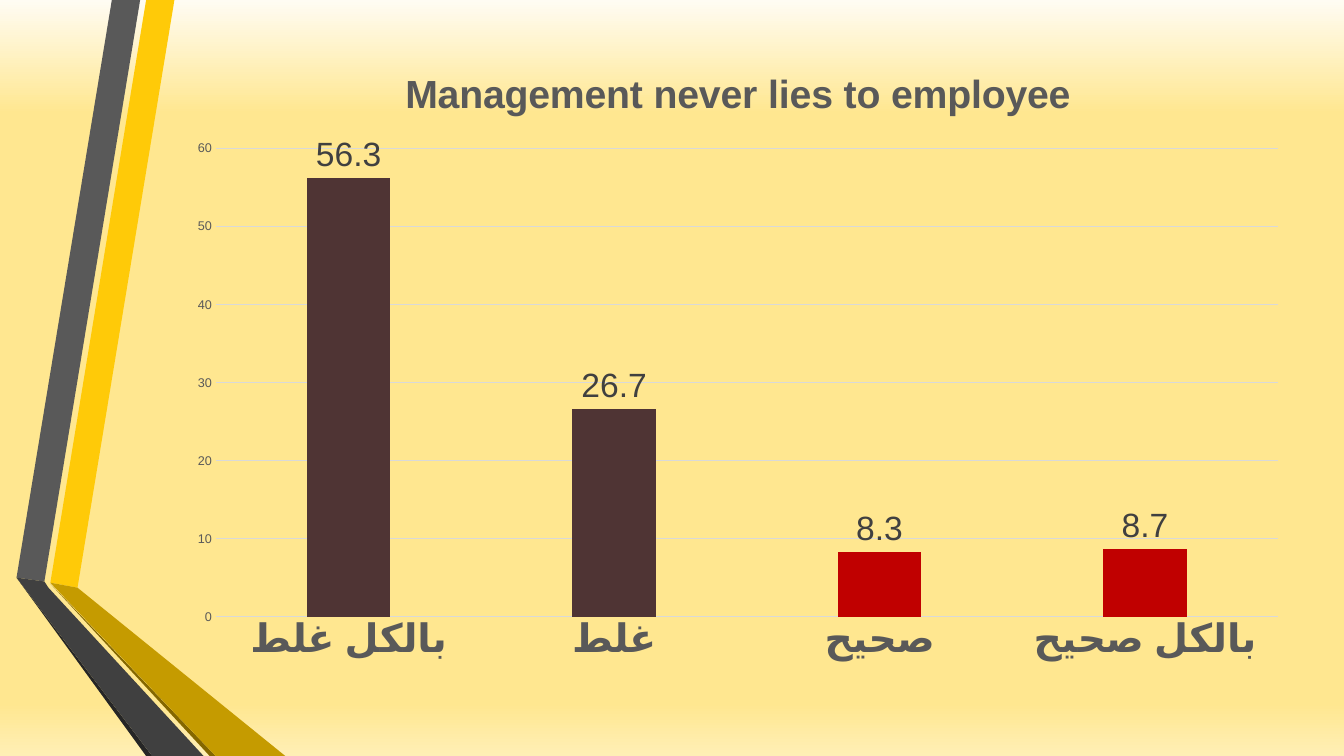
"""Build a slide with a column chart of survey answers beside a folded ribbon."""
from lxml import etree
from pptx import Presentation
from pptx.chart.data import CategoryChartData
from pptx.dml.color import RGBColor
from pptx.enum.chart import XL_CHART_TYPE as CT, XL_LABEL_POSITION as LP, XL_TICK_MARK as TM
from pptx.oxml.ns import qn
from pptx.util import Pt

TITLE = "Management never lies to employee"
ANSWERS = {"بالکل غلط": 56.3, "غلط": 26.7, "صحیح": 8.3, "بالکل صحیح": 8.7}
BAR, AGREE_BAR = "4F3434", "C00000"
AGREE_ANSWERS = (2, 3)
TEXT, LABEL, GRID = "595959", "404040", "D9D9D9"
BACKGROUND = [(0, "FFFCF3"), (15, "FFE790"), (93, "FFE790"), (100, "FFEFB5")]
CHART_BOX = (125.3, 31.7, 803.5, 448.6)
RIBBONS = [
    ("FFCA08", [(36, 416.2), (55.4, 419.8), (124.6, 0), (104.4, 0)]),
    ("595959", [(100.1, 0), (79.9, 0), (11.8, 412.6), (31.7, 415.4)]),
    ("262626", [(11.8, 412.6), (104.4, 540), (108.7, 540)]),
    ("846700", [(36, 416.9), (149.8, 540), (154.1, 540)]),
    ("C59B00", [(36, 416.2), (154.1, 540), (203.8, 540), (55.4, 419.8)]),
    ("404040", [(145.4, 540), (34.6, 419.8), (31.7, 415.4), (11.8, 412.6), (108.7, 540)]),
]


def paint(fill, color):
    fill.solid()
    fill.fore_color.rgb = RGBColor.from_string(color)


def style(font, size, color, bold=False):
    font.name, font.size, font.bold = "Arial", Pt(size), bold
    font.color.rgb = RGBColor.from_string(color)


def rule(line):
    line.width = Pt(0.75)
    paint(line.fill, GRID)


def set_background(s):
    fill = s.background.fill
    fill.gradient()
    fill.gradient_angle = 270
    stops = next(s.element.iter(qn("a:gsLst")))
    stops.clear()
    for place, color in BACKGROUND:
        stop = etree.SubElement(stops, qn("a:gs"), pos=str(place * 1000))
        etree.SubElement(stop, qn("a:srgbClr"), val=color)


def add_ribbon(s, color, points):
    start, *rest = [(Pt(x), Pt(y)) for x, y in points]
    builder = s.shapes.build_freeform(*start)
    builder.add_line_segments(rest, close=True)
    sp = builder.convert_to_shape()
    sp.shadow.inherit = False
    paint(sp.fill, color)
    sp.line.fill.background()


def add_answers_chart(s):
    data = CategoryChartData()
    data.categories = list(ANSWERS)
    data.add_series("Series 1", list(ANSWERS.values()))
    chart = s.shapes.add_chart(CT.COLUMN_CLUSTERED, *map(Pt, CHART_BOX), data).chart
    style(chart.font, 10, "000000")
    chart.has_legend = False
    chart.has_title = True
    chart.chart_title.include_in_layout = False
    p = chart.chart_title.text_frame.paragraphs[0]
    p.text = TITLE
    style(p.font, 28, TEXT, True)

    cat, val = chart.category_axis, chart.value_axis
    for axis, size, bold in ((cat, 28, True), (val, 9, False)):
        axis.major_tick_mark = axis.minor_tick_mark = TM.NONE
        style(axis.tick_labels.font, size, TEXT, bold)
    rule(cat.format.line)
    val.format.line.fill.background()
    rule(val.major_gridlines.format.line)

    plot = chart.plots[0]
    plot.gap_width, plot.overlap = 219, -27
    plot.vary_by_categories = False
    series = plot.series[0]
    series.invert_if_negative = False
    paint(series.format.fill, BAR)
    for i in AGREE_ANSWERS:
        paint(series.points[i].format.fill, AGREE_BAR)
    labels = series.data_labels
    labels.show_value = True
    labels.position = LP.OUTSIDE_END
    style(labels.font, 24, LABEL)


def main():
    prs = Presentation()
    prs.slide_width, prs.slide_height = Pt(960), Pt(540)
    s = prs.slides.add_slide(prs.slide_layouts[6])
    set_background(s)
    for color, points in RIBBONS:
        add_ribbon(s, color, points)
    add_answers_chart(s)
    prs.save("out.pptx")


if __name__ == "__main__":
    main()
